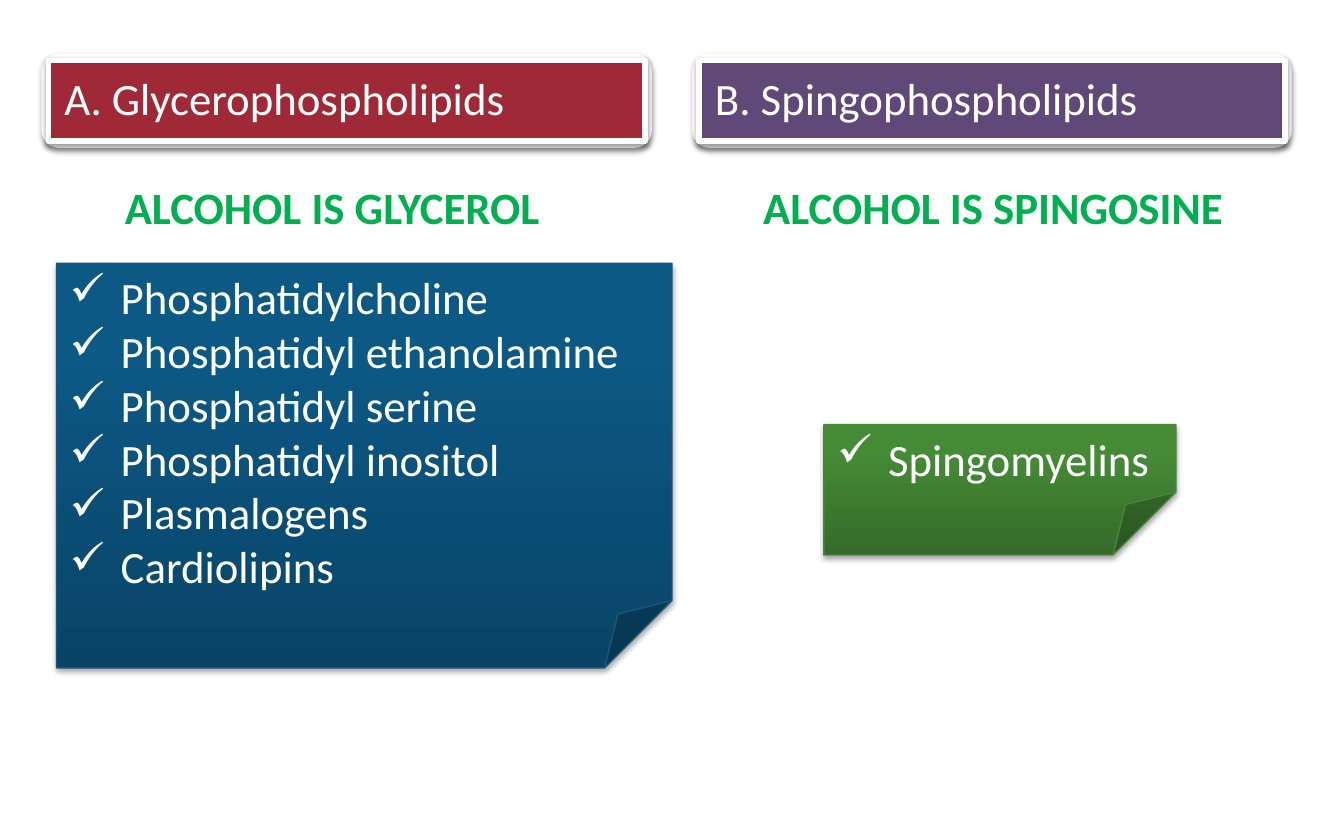
from copy import deepcopy

from lxml import etree
from pptx import Presentation
from pptx.dml.color import RGBColor
from pptx.enum.shapes import MSO_SHAPE
from pptx.enum.text import MSO_ANCHOR, MSO_AUTO_SIZE, PP_ALIGN
from pptx.oxml.ns import qn
from pptx.util import Pt

RECT, ROUND, NOTE = MSO_SHAPE.RECTANGLE, MSO_SHAPE.ROUNDED_RECTANGLE, MSO_SHAPE.FOLDED_CORNER
TOP, MIDDLE = MSO_ANCHOR.TOP, MSO_ANCHOR.MIDDLE
LEFT, GROW = PP_ALIGN.LEFT, MSO_AUTO_SIZE.SHAPE_TO_FIT_TEXT

PX = 9144  # EMU per px, 100 px to the inch
THEME = {
    "font": "Calibri", "size": 24,
    "white": "FFFFFF", "alcohol": "00B050",
    "glycero": "9F2936", "spingo": "604878",
    "blue": ("094467", "0C5986", "0A5A89"), "blue_line": "18577C",
    "green": ("356B2A", "458B36", "458D35"), "green_line": "4B843F",
}


def style_shape(sp, line, width, alpha, distance):
    """Set the outline and a soft shadow that falls straight down."""
    sp.line.color.rgb = RGBColor.from_string(line)
    sp.line.width = Pt(width)
    sp.shadow.inherit = False
    effects = sp._element.spPr.find(qn("a:effectLst"))
    shadow = etree.SubElement(effects, qn("a:outerShdw"), blurRad=str(Pt(3.1)),
                              dist=str(Pt(distance)), dir="5400000", rotWithShape="0")
    color = etree.SubElement(shadow, qn("a:srgbClr"), val="000000")
    etree.SubElement(color, qn("a:alpha"), val=str(alpha * 1000))


def add_line(p, text, color, bold=False):
    p.alignment = LEFT
    r = p.add_run()
    r.text = text
    r.font.name = THEME["font"]
    r.font.size = Pt(THEME["size"])
    r.font.bold = bold
    r.font.color.rgb = RGBColor.from_string(color)


prs = Presentation()
prs.slide_width, prs.slide_height = 1000 * PX, 625 * PX
s = prs.slides.add_slide(prs.slide_layouts[6])

# Headings: a plain bar on a rounded plate
for text, color, left, width in [
    ("A. Glycerophospholipids", THEME["glycero"], 33, 450),
    ("B. Spingophospholipids", THEME["spingo"], 517, 442),
]:
    group = s.shapes.add_group_shape()
    for kind, inset in [(ROUND, 0), (RECT, 3)]:
        sp = group.shapes.add_shape(kind, (left + inset) * PX, (42 + inset) * PX,
                                    (width - 2 * inset) * PX, (66 - 2 * inset) * PX)
        sp.fill.solid()
        sp.fill.fore_color.rgb = RGBColor.from_string(color)
        style_shape(sp, THEME["white"], 3, 38, 1.6)
    tf = sp.text_frame
    tf.word_wrap = True
    tf.vertical_anchor = MIDDLE
    tf.margin_left = tf.margin_right = tf.margin_top = tf.margin_bottom = 12 * PX
    p = tf.paragraphs[0]
    p.line_spacing = 0.9
    add_line(p, text, THEME["white"])

# Alcohol of each class
for text, left, width in [
    ("ALCOHOL IS GLYCEROL", 83, 332),
    ("ALCOHOL IS SPINGOSINE", 558, 365),
]:
    tf = s.shapes.add_textbox(left * PX, 129 * PX, width * PX, 50 * PX).text_frame
    tf.word_wrap = False
    tf.auto_size = GROW
    add_line(tf.paragraphs[0], text, THEME["alcohol"], bold=True)

# Notes with the members of each class; fold is in 1/100000 of the shorter side
glycero_members = ["Phosphatidylcholine", "Phosphatidyl ethanolamine", "Phosphatidyl serine",
                   "Phosphatidyl inositol", "Plasmalogens", "Cardiolipins"]
for members, box, fold, name, wrap in [
    (glycero_members, (42, 196, 458, 301), 16667, "blue", True),
    (["Spingomyelins"], (613, 316, 262, 97), 48300, "green", False),
]:
    sp = s.shapes.add_shape(NOTE, *[v * PX for v in box])
    guides = sp._element.spPr.find(".//" + qn("a:avLst"))
    etree.SubElement(guides, qn("a:gd"), name="adj", fmla=f"val {fold}")
    sp.fill.gradient()
    sp.fill.gradient_angle = 90
    stop_list = sp._element.spPr.find(".//" + qn("a:gsLst"))
    stop_list.append(deepcopy(stop_list[0]))
    for stop, position, color in zip(sp.fill.gradient_stops, (0, 0.8, 1), THEME[name]):
        stop.position = position
        stop.color.rgb = RGBColor.from_string(color)
    style_shape(sp, THEME[name + "_line"], 0.75, 35, 1.8)
    tf = sp.text_frame
    tf.word_wrap = wrap
    tf.auto_size = GROW
    tf.vertical_anchor = TOP
    for i, member in enumerate(members):
        p = tf.add_paragraph() if i else tf.paragraphs[0]
        add_line(p, member, THEME["white"])
        pPr = p._p.get_or_add_pPr()
        pPr.set("marL", str(38 * PX))
        pPr.set("indent", str(-38 * PX))
        etree.SubElement(pPr, qn("a:buChar"), char="✓")

prs.save("out.pptx")
